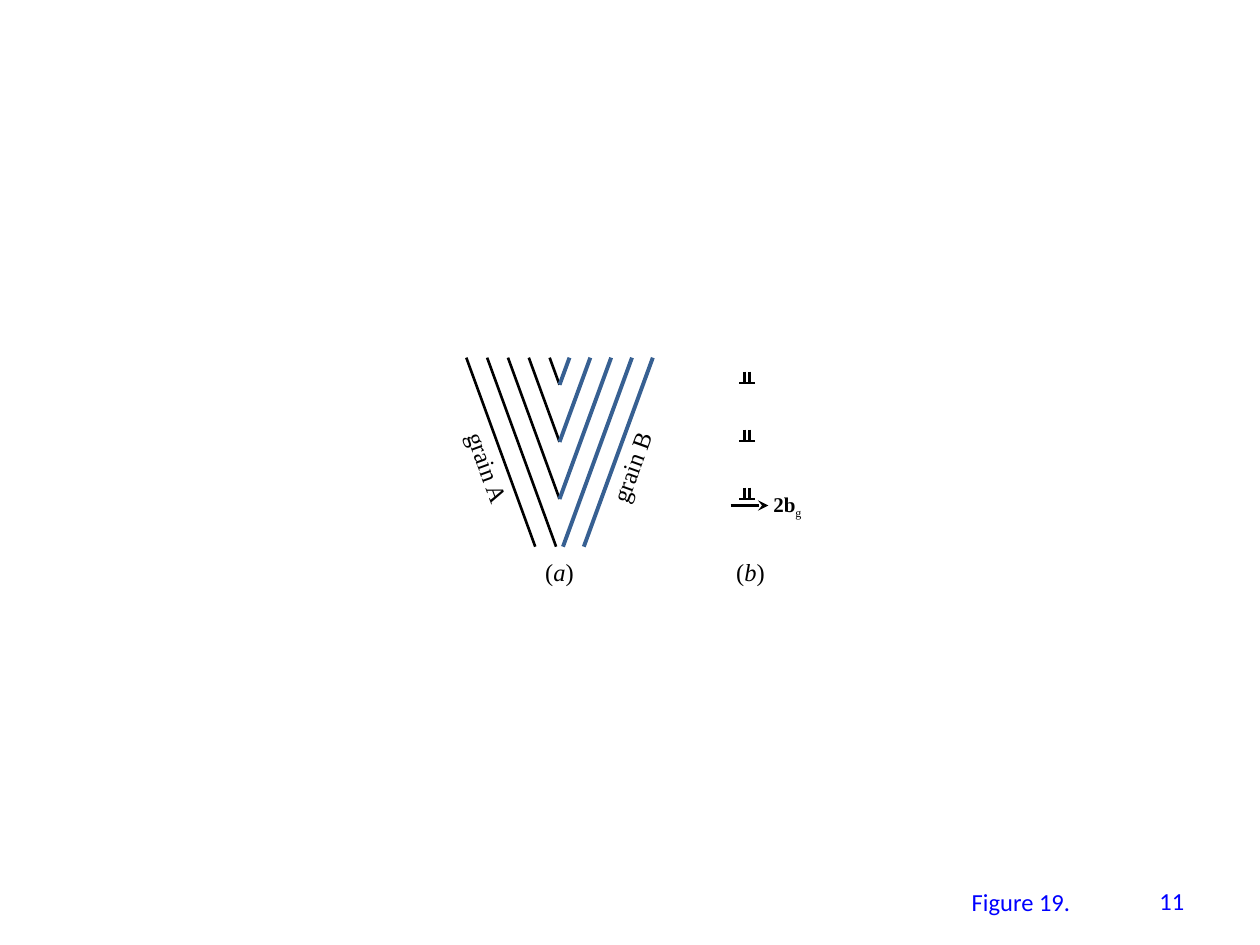
from lxml.etree import SubElement
from pptx import Presentation
from pptx.dml.color import RGBColor
from pptx.enum.shapes import MSO_CONNECTOR
from pptx.enum.text import MSO_ANCHOR, PP_ALIGN
from pptx.oxml.ns import qn
from pptx.util import Cm, Pt

SERIF, SANS = "Times New Roman", "Calibri"
BLACK, GRAIN_BLUE, CAPTION_BLUE = "000000", "376092", "0000FF"
LABEL_WIDTH, LABEL_HEIGHT = 1.09, 0.86


def color(hex_string):
    return RGBColor.from_string(hex_string)


def style(paragraph, font_name, size, hex_string):
    paragraph.font.name = font_name
    paragraph.font.size = Pt(size)
    paragraph.font.color.rgb = color(hex_string)


def add_line(slide, start, end, hex_string=BLACK, width=1.5, arrow=False):
    connector = slide.shapes.add_connector(
        MSO_CONNECTOR.STRAIGHT, *(Cm(value) for value in (*start, *end)))
    connector.line.color.rgb = color(hex_string)
    connector.line.width = Pt(width)
    if arrow:
        SubElement(connector.line._get_or_add_ln(), qn("a:tailEnd"), type="stealth")
    SubElement(connector._element.spPr, qn("a:effectLst"))


def add_text(slide, box, texts, size=14, font_name=SERIF, hex_string=BLACK,
             align=PP_ALIGN.CENTER, rotation=0):
    shape = slide.shapes.add_textbox(*(Cm(value) for value in box))
    shape.rotation = rotation
    shape.text_frame.word_wrap = False
    paragraph = shape.text_frame.paragraphs[0]
    paragraph.alignment = align
    style(paragraph, font_name, size, hex_string)
    for text in texts:
        paragraph.add_run().text = text
    return paragraph.runs


def add_panel_label(slide, center, top, letter):
    box = (center - LABEL_WIDTH / 2, top, LABEL_WIDTH, LABEL_HEIGHT)
    runs = add_text(slide, box, ["(", letter, ")"])
    runs[1].font.italic = True


def add_grains(slide, left, top, width, height):
    """Two mirrored sets of lattice planes meeting at the grain boundary."""
    center = left + width / 2
    spacing, slope = 0.42, 0.365
    grains = (("grain A", -1, BLACK, 1.5), ("grain B", 1, GRAIN_BLUE, 2.25))
    for name, side, hex_string, line_width in grains:
        # Planes stop at the boundary or at the bottom of the box
        for index in range(5):
            distance = width / 2 - index * spacing
            drop = min(height, distance / slope)
            add_line(slide, (center + side * distance, top),
                     (center + side * (distance - drop * slope), top + drop),
                     hex_string, line_width)
        # Grain name, parallel to the planes
        add_text(slide, (center + side * 1.45 - 1, top + 1.78, 2, LABEL_HEIGHT),
                 [name], rotation=-side * 70.1 % 360)
    add_panel_label(slide, center, top + height + 0.08, "a")


def add_dislocations(slide, left, top):
    """Column of paired edge dislocations with their Burgers vector."""
    stem, half_foot = 0.23, 0.11
    for row in range(3):
        foot = top + row * 1.17 + stem
        for x in (left + 0.28, left + 0.38):
            add_line(slide, (x, foot - stem), (x, foot))
            add_line(slide, (x + half_foot, foot), (x - half_foot, foot))
    # Burgers vector
    add_line(slide, (left, top + 2.7), (left + 0.76, top + 2.7), width=2, arrow=True)
    vector, subscript = add_text(slide, (left + 0.61, top + 2.29, 1.17, 0.76),
                                 ["2b", "g"], size=12, align=PP_ALIGN.LEFT)
    vector.font.bold = True
    subscript._r.get_or_add_rPr().set("baseline", "-25000")
    add_panel_label(slide, left + 0.4, top + 3.61, "b")


def add_figure_number(slide, left, top, width, height):
    """Caption at lower right: fixed prefix and the number as slide title."""
    add_text(slide, (left + width - 4.79, top + 0.1, 2.51, LABEL_HEIGHT),
             ["Figure 19."], font_name=SANS, hex_string=CAPTION_BLUE,
             align=PP_ALIGN.LEFT)
    title = slide.shapes.title
    title.left, title.top, title.width, title.height = (
        Cm(value) for value in (left, top, width, height))
    title.text_frame.text = "11"
    title.text_frame.vertical_anchor = MSO_ANCHOR.MIDDLE
    paragraph = title.text_frame.paragraphs[0]
    paragraph.alignment = PP_ALIGN.RIGHT
    style(paragraph, SANS, 14, CAPTION_BLUE)


def main():
    presentation = Presentation()
    presentation.slide_width, presentation.slide_height = Cm(25.4), Cm(19.05)
    slide = presentation.slides.add_slide(presentation.slide_layouts[5])
    add_grains(slide, 9.4, 7.21, 3.76, 3.81)
    add_dislocations(slide, 14.73, 7.49)
    add_figure_number(slide, 18.21, 17.65, 5.92, 1.02)
    presentation.save("out.pptx")


if __name__ == "__main__":
    main()
